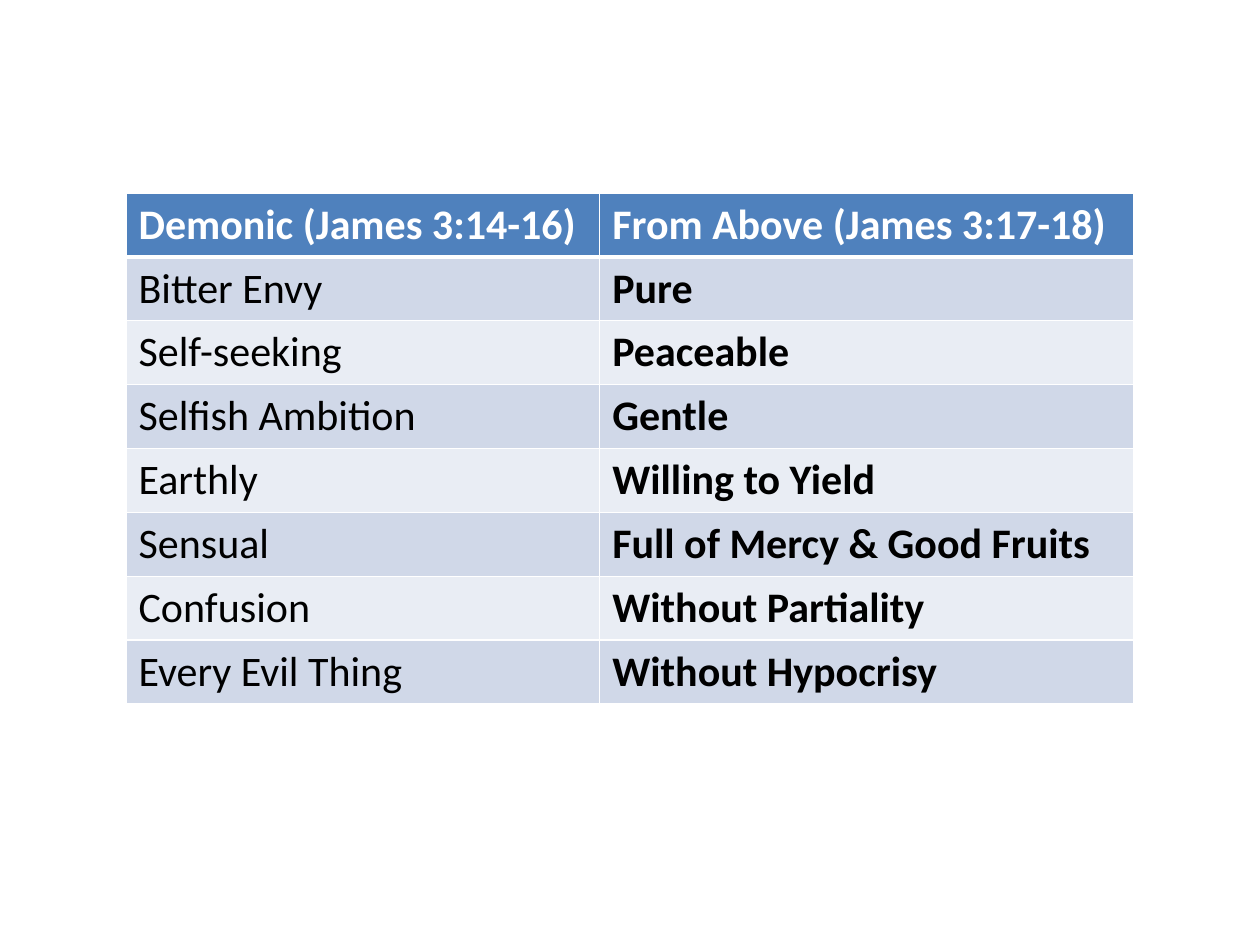
from lxml.etree import SubElement
from pptx import Presentation
from pptx.dml.color import RGBColor
from pptx.oxml.ns import qn
from pptx.util import Cm, Pt

HEADER_BLUE = RGBColor(0x4F, 0x81, 0xBD)
BAND_DARK = RGBColor(0xD0, 0xD8, 0xE8)
BAND_LIGHT = RGBColor(0xE9, 0xED, 0xF4)
WHITE = RGBColor(0xFF, 0xFF, 0xFF)
BLACK = RGBColor(0x00, 0x00, 0x00)

WISDOM_ROWS = [
    ("Demonic (James 3:14-16)", "From Above (James 3:17-18)"),
    ("Bitter Envy", "Pure"),
    ("Self-seeking", "Peaceable"),
    ("Selfish Ambition", "Gentle"),
    ("Earthly", "Willing to Yield"),
    ("Sensual", "Full of Mercy & Good Fruits"),
    ("Confusion", "Without Partiality"),
    ("Every Evil Thing", "Without Hypocrisy"),
]


def add_border(cell, side, width):
    line = SubElement(cell._tc.get_or_add_tcPr(), qn(f"a:ln{side}"), w=str(Pt(width)))
    SubElement(SubElement(line, qn("a:solidFill")), qn("a:srgbClr"), val=str(WHITE))


presentation = Presentation()
presentation.slide_width = Cm(25.4)
presentation.slide_height = Cm(19.05)
slide = presentation.slides.add_slide(presentation.slide_layouts[6])

# Comparison table
comparison = slide.shapes.add_table(
    len(WISDOM_ROWS), 2, Cm(2.54), Cm(3.89), Cm(20.32), Cm(10.16)
).table
comparison.columns[0].width = Cm(9.55)
comparison.columns[1].width = Cm(10.77)

for row, traits in enumerate(WISDOM_ROWS):
    is_header = row == 0
    for column, trait in enumerate(traits):
        cell = comparison.cell(row, column)

        # White grid, with a heavier rule under the header
        for side in "LRTB":
            heavy = (is_header and side == "B") or (row == 1 and side == "T")
            add_border(cell, side, 3 if heavy else 1)

        # Header and banded fills
        cell.fill.solid()
        band = BAND_DARK if row % 2 else BAND_LIGHT
        cell.fill.fore_color.rgb = HEADER_BLUE if is_header else band

        # Text: header and right column are bold
        cell.text = trait
        font = cell.text_frame.paragraphs[0].font
        font.name = "Calibri"
        font.size = Pt(24)
        font.bold = is_header or column == 1
        font.color.rgb = WHITE if is_header else BLACK

presentation.save("out.pptx")
